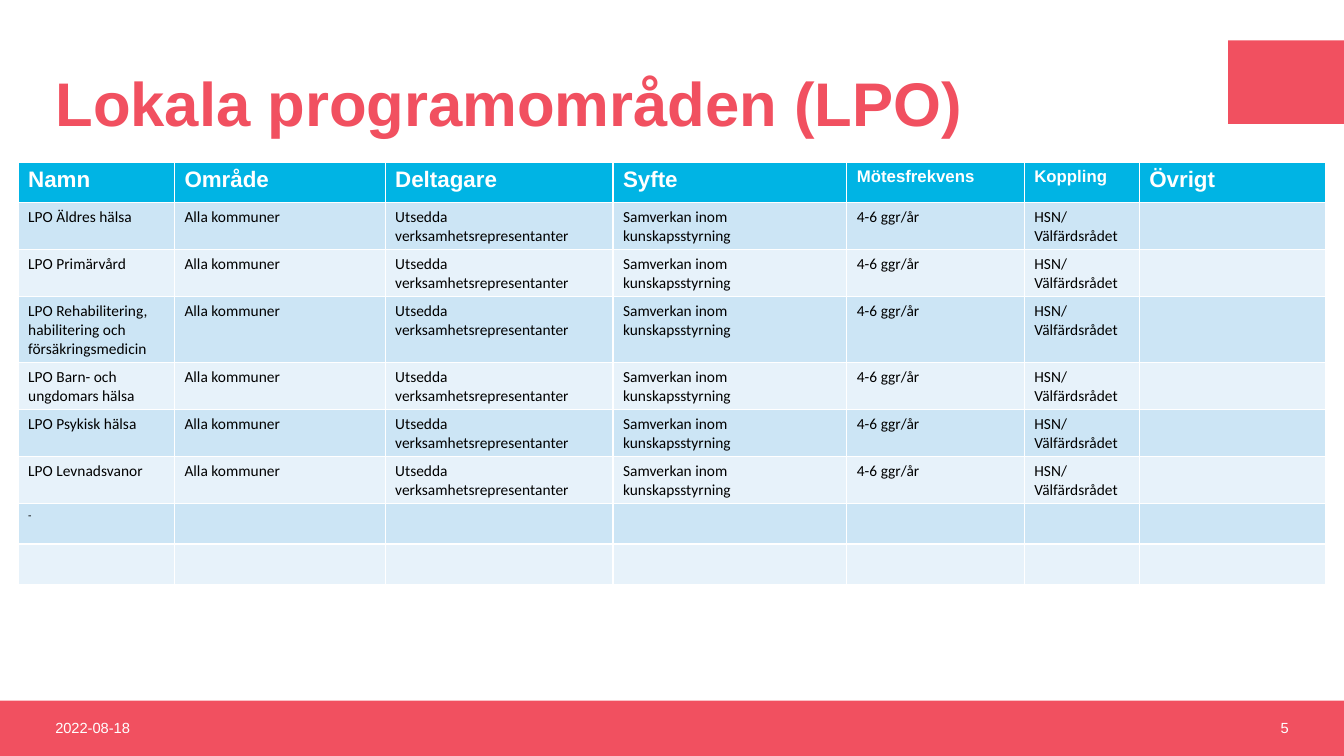
import pptx
import pptx.util
import pptx.dml.color
import pptx.enum.shapes
import pptx.enum.text

Inches = pptx.util.Inches
ALIGN = pptx.enum.text.PP_ALIGN
MIDDLE = pptx.enum.text.MSO_ANCHOR.MIDDLE
RED, BLUE, WHITE, BLACK = "F15060", "00B4E4", "FFFFFF", "000000"
ROW_FILLS = ["CCE5F5", "E7F2FA"]


def color(hex_string):
    return pptx.dml.color.RGBColor.from_string(hex_string)


def format_text(paragraph, text, size, font_color, name="Arial", bold=False):
    paragraph.text = text
    values = {"name": name, "size": pptx.util.Pt(size), "bold": bold}
    for attribute, value in values.items():
        setattr(paragraph.font, attribute, value)
    paragraph.font.color.rgb = color(font_color)


presentation = pptx.Presentation()
presentation.slide_width = Inches(13.33)
presentation.slide_height = Inches(7.5)
slide = presentation.slides.add_slide(presentation.slide_layouts[5])

# Footer bar and corner block
for left, top, width, height in [(0, 6.95, 13.33, 0.55), (12.18, 0.4, 1.15, 0.83)]:
    shape = slide.shapes.add_shape(
        pptx.enum.shapes.MSO_SHAPE.RECTANGLE,
        Inches(left), Inches(top), Inches(width), Inches(height))
    shape.shadow.inherit = False
    shape.fill.solid()
    shape.fill.fore_color.rgb = color(RED)
    shape.line.fill.background()

# Title
title = slide.shapes.title
title_box = {"left": 0.45, "top": 0.4, "width": 11.61, "height": 1.32}
for attribute, value in title_box.items():
    setattr(title, attribute, Inches(value))
title.text_frame.vertical_anchor = MIDDLE
paragraph = title.text_frame.paragraphs[0]
format_text(paragraph, "Lokala programområden (LPO)", 44, RED, bold=True)
paragraph.alignment = ALIGN.LEFT
paragraph.line_spacing = 0.9

# Date and slide number
for left, text, alignment in [(0.45, "2022-08-18", ALIGN.LEFT), (9.88, "5", ALIGN.RIGHT)]:
    box = slide.shapes.add_textbox(Inches(left), Inches(6.95), Inches(3), Inches(0.54))
    box.text_frame.word_wrap = True
    box.text_frame.vertical_anchor = MIDDLE
    paragraph = box.text_frame.paragraphs[0]
    format_text(paragraph, text, 10.5, WHITE)
    paragraph.alignment = alignment

# Table content
headers = [("Namn", 16), ("Område", 16), ("Deltagare", 16), ("Syfte", 16),
           ("Mötesfrekvens", 12), ("Koppling", 12), ("Övrigt", 16)]
column_widths = [1.55, 2.09, 2.26, 2.32, 1.76, 1.14, 1.85]
areas = ["LPO Äldres hälsa", "LPO Primärvård",
         "LPO Rehabilitering, habilitering och försäkringsmedicin",
         "LPO Barn- och ungdomars hälsa", "LPO Psykisk hälsa", "LPO Levnadsvanor"]
shared_values = ["Alla kommuner", "Utsedda verksamhetsrepresentanter",
                 "Samverkan inom kunskapsstyrning", "4-6 ggr/år",
                 "HSN/\vVälfärdsrådet", ""]
body_rows = [[area] + shared_values for area in areas]
body_rows += [["-"] + [""] * 6, [""] * 7]

# Table; its default style supplies the white cell borders
row_count = len(body_rows) + 1
table = slide.shapes.add_table(
    row_count, len(headers), Inches(0.18), Inches(1.61),
    Inches(sum(column_widths)), Inches(0.4 * row_count)).table
for column, width in zip(table.columns, column_widths):
    column.width = Inches(width)
for row in table.rows:
    row.height = Inches(0.4)

for column_index, (text, size) in enumerate(headers):
    cell = table.cell(0, column_index)
    cell.fill.solid()
    cell.fill.fore_color.rgb = color(BLUE)
    format_text(cell.text_frame.paragraphs[0], text, size, WHITE, bold=True)

for row_index, values in enumerate(body_rows):
    for column_index, text in enumerate(values):
        cell = table.cell(row_index + 1, column_index)
        cell.fill.solid()
        cell.fill.fore_color.rgb = color(ROW_FILLS[row_index % 2])
        size = 8 if text == "-" else 11
        format_text(cell.text_frame.paragraphs[0], text, size, BLACK, name="Calibri")

presentation.save("out.pptx")
